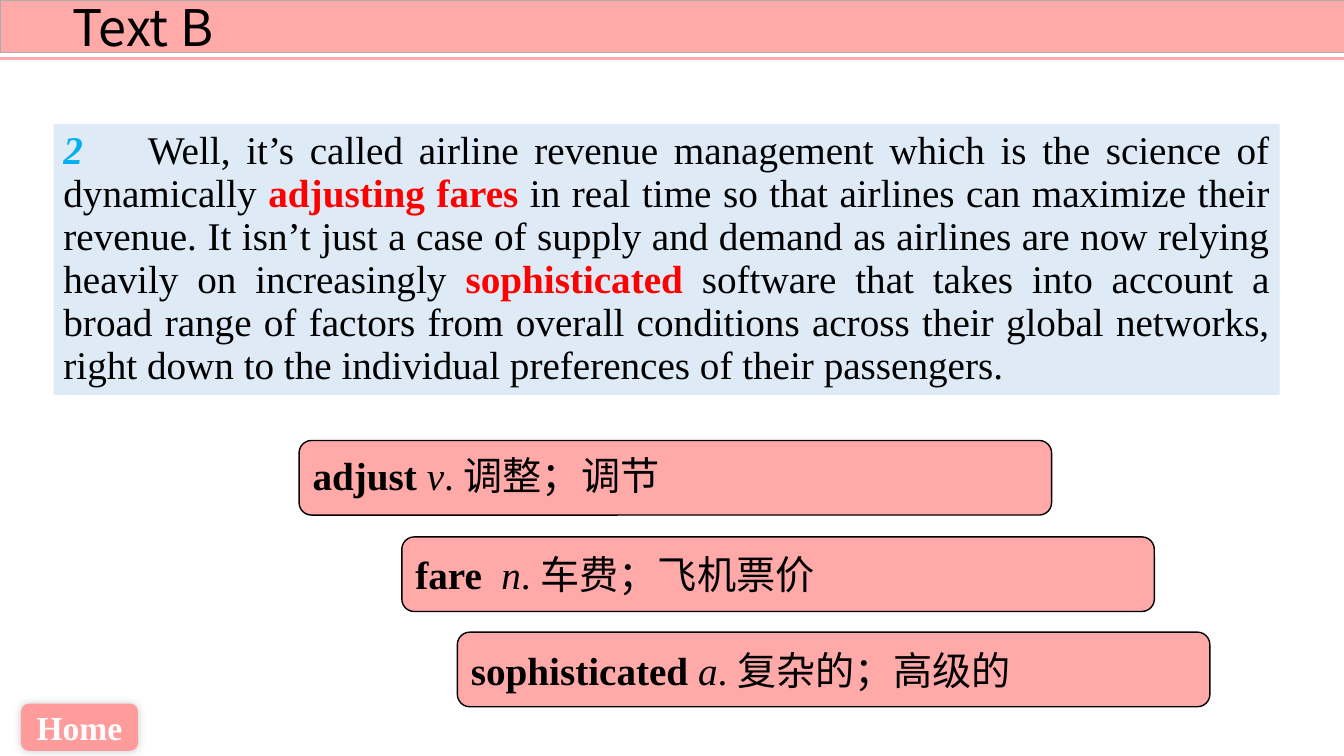
import pptx
import pptx.dml.color
import pptx.enum.shapes
import pptx.enum.text
import pptx.oxml
import pptx.util
from pptx.util import Cm, Pt

NS = 'xmlns:a="http://schemas.openxmlformats.org/drawingml/2006/main"'
SANS, SERIF = "Noto Sans CJK SC", "Times New Roman"
PINK, BLACK, RED = "FFA9A9", "000000", "FF0000"
KIND = pptx.enum.shapes.MSO_SHAPE
ALIGN = pptx.enum.text.PP_ALIGN
ANCHOR = pptx.enum.text.MSO_ANCHOR


def tint(color):
    return pptx.dml.color.RGBColor.from_string(color)


def panel(kind, box, fill, line=None, runs=(), size=28, font=SERIF, tab=None, **form):
    """Add a filled shape (no fill if None) with one paragraph of (text, colour, style) runs."""
    shape = slide.shapes.add_shape(kind, *map(Cm, box))
    shape.shadow.inherit = False
    if fill:
        shape.fill.solid()
        shape.fill.fore_color.rgb = tint(fill)
    else:
        shape.fill.background()
    if line:
        shape.line.color.rgb = tint(line)
        shape.line.width = Pt(1)
    else:
        shape.line.fill.background()
    frame = shape.text_frame
    frame.word_wrap = True
    frame.vertical_anchor = form.pop("anchor", ANCHOR.MIDDLE)
    para = frame.paragraphs[0]
    for key, value in {"alignment": ALIGN.LEFT, **form}.items():
        setattr(para, key, value)
    if tab:
        para._p.get_or_add_pPr().append(pptx.oxml.parse_xml(
            f'<a:tabLst {NS}><a:tab pos="{Cm(tab)}" algn="l"/></a:tabLst>'))
    for text, color, style in runs:
        run = para.add_run()
        run.text = text
        look = {"name": font, "size": Pt(size), "bold": "b" in style, "italic": "i" in style}
        for key, value in look.items():
            setattr(run.font, key, value)
        run.font.color.rgb = tint(color)
        run._r.get_or_add_rPr().append(pptx.oxml.parse_xml(f'<a:ea {NS} typeface="{SANS}"/>'))
    return shape


deck = pptx.Presentation()
deck.slide_width, deck.slide_height = Cm(33.88), Cm(19.05)
slide = deck.slides.add_slide(deck.slide_layouts[6])

# Header
panel(KIND.RECTANGLE, (0, 0, 33.9, 1.32), PINK, "AFABAB")
rule = slide.shapes.add_connector(
    pptx.enum.shapes.MSO_CONNECTOR.STRAIGHT, 0, Cm(1.47), Cm(33.9), Cm(1.47))
rule.line.color.rgb = tint(PINK)
rule.line.width = Pt(2)
rule._element.spPr.append(pptx.oxml.parse_xml(f"<a:effectLst {NS}/>"))
panel(KIND.RECTANGLE, (1.57, -0.23, 5.77, 1.8), None, size=36, font=SANS,
      runs=[("Text B", BLACK, "")], anchor=ANCHOR.TOP)

# Home button
home = panel(KIND.ROUNDED_RECTANGLE, (0.53, 17.73, 2.95, 1.19), "FF9B9B", size=24,
             runs=[("Home", "FFFFFF", "b")], alignment=ALIGN.CENTER)
glow = home._element.spPr.find(pptx.oxml.ns.qn("a:effectLst"))
glow.append(pptx.oxml.parse_xml(
    f'<a:outerShdw {NS} blurRad="{Pt(6)}" dist="0" dir="18900000">'
    '<a:srgbClr val="000000"><a:alpha val="20000"/></a:srgbClr></a:outerShdw>'))

# Passage
passage = [
    ("2\t", "00B0F0", "bi"),
    ("Well, it’s called airline revenue management which is the science of dynamically ",
     BLACK, ""),
    ("adjusting fares", RED, "b"),
    (" in real time so that airlines can maximize their revenue. It isn’t just a case of "
     "supply and demand as airlines are now relying heavily on increasingly ", BLACK, ""),
    ("sophisticated ", RED, "b"),
    ("software that takes into account a broad range of factors from overall conditions "
     "across their global networks, right down to the individual preferences of their "
     "passengers.", BLACK, ""),
]
panel(KIND.RECTANGLE, (1.35, 3.12, 30.91, 6.83), "DEEBF7", runs=passage, tab=2.13,
      anchor=ANCHOR.TOP, alignment=ALIGN.JUSTIFY, line_spacing=Pt(30.8))

# Word cards
cards = [
    (7.54, 11.1, 0.9, "adjust ", "v", ". 调整；调节"),
    (10.13, 13.53, 1.0, "fare\t", "n", ". 车费；飞机票价"),
    (11.53, 15.93, 1.0, "sophisticated ", "a", ". 复杂的；高级的"),
]
for left, top, space, word, part, sense in cards:
    panel(KIND.ROUNDED_RECTANGLE, (left, top, 18.97, 1.88), PINK, BLACK, tab=2.17,
          runs=[(word, BLACK, "b"), (part, BLACK, "i"), (sense, BLACK, "")],
          line_spacing=space)

deck.save("out.pptx")
